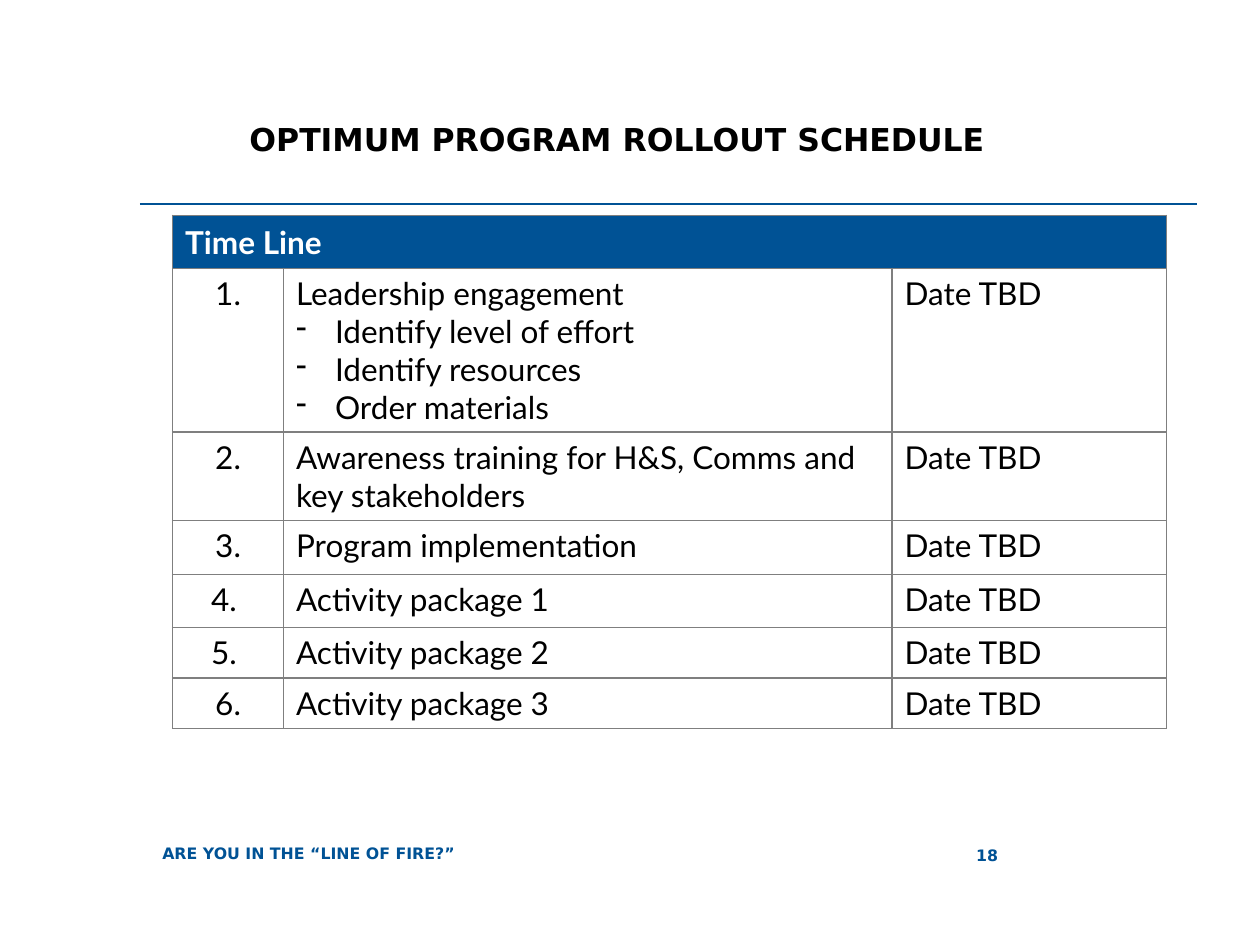
from pptx import Presentation
from pptx.dml.color import RGBColor
from pptx.enum.shapes import MSO_CONNECTOR
from pptx.enum.text import MSO_ANCHOR, PP_ALIGN
from pptx.oxml.ns import qn
from pptx.util import Inches, Pt
from lxml import etree

LINE = MSO_CONNECTOR.STRAIGHT
TOP, MID = MSO_ANCHOR.TOP, MSO_ANCHOR.MIDDLE
LEFT, MID_X, RIGHT = PP_ALIGN.LEFT, PP_ALIGN.CENTER, PP_ALIGN.RIGHT
BLUE = RGBColor(0x00, 0x52, 0x95)
GRAY = RGBColor(0x7F, 0x7F, 0x7F)
BLACK = RGBColor(0, 0, 0)
WHITE = RGBColor(255, 255, 255)

HEAD = {"name": "DejaVu Sans", "size": Pt(18), "bold": True}
FOOT = {"name": "DejaVu Sans", "size": Pt(9), "bold": True}
BODY = {"name": "Lato", "size": Pt(18), "bold": False}
BAND = {"name": "Lato", "size": Pt(18), "bold": True}

TEXTS = [
    ("OPTIMUM PROGRAM ROLLOUT SCHEDULE", (1.98, 0.9, 7.54, 0.8), HEAD, BLACK, LEFT, TOP, 0),
    ("ARE YOU IN THE “LINE OF FIRE?”", (1.19, 6.59, 5.54, 0.37), FOOT, BLUE, LEFT, MID, 0.1),
    ("18", (7.01, 6.59, 1.01, 0.4), FOOT, BLUE, RIGHT, MID, 0.1),
]
TITLE = "Time Line"
DATE = "Date TBD"
STEPS = [
    ("1.", "Leadership engagement",
     ["Identify level of effort", "Identify resources", "Order materials"]),
    ("2.", "Awareness training for H&S, Comms and key stakeholders", []),
    ("3.", "Program implementation", []),
    ("4.\u00a0", "Activity package 1", []),
    ("5.\u00a0", "Activity package 2", []),
    ("6.", "Activity package 3", []),
]
COLS = [0.88, 4.83, 2.18]
ROWS = [0.42, 1.3, 0.7, 0.43, 0.42, 0.4, 0.4]
INDENT = Inches(0.31)


def style(para, look, tint, align=LEFT):
    para.alignment = align
    for key, value in look.items():
        setattr(para.font, key, value)
    para.font.color.rgb = tint


def bullet(para):
    props = para._p.get_or_add_pPr()
    props.set("marL", str(INDENT))
    props.set("indent", str(-INDENT))
    etree.SubElement(props, qn("a:buChar")).set("char", "-")


def border(cell):
    props = cell._tc.get_or_add_tcPr()
    for side in ("lnL", "lnR", "lnT", "lnB"):
        edge = etree.SubElement(props, qn(f"a:{side}"), w=str(Pt(1)))
        fill = etree.SubElement(edge, qn("a:solidFill"))
        etree.SubElement(fill, qn("a:srgbClr"), val=str(GRAY))


def write(cell, text, align=LEFT, subs=()):
    frame = cell.text_frame
    frame.text = text
    style(frame.paragraphs[0], BODY, BLACK, align)
    for sub in subs:
        para = frame.add_paragraph()
        para.text = sub
        bullet(para)
        style(para, BODY, BLACK)


deck = Presentation()
deck.slide_width, deck.slide_height = Inches(10), Inches(7.5)
slide = deck.slides.add_slide(deck.slide_layouts[6])

rule = slide.shapes.add_connector(LINE, *map(Inches, (1.11, 1.62, 9.5, 1.62)))
rule.line.color.rgb = BLUE
rule.line.width = Pt(1)
etree.SubElement(rule._element.spPr, qn("a:effectLst"))

for text, place, look, tint, align, anchor, inset in TEXTS:
    frame = slide.shapes.add_textbox(*map(Inches, place)).text_frame
    frame.word_wrap = True
    frame.vertical_anchor = anchor
    frame.margin_left = Inches(inset)
    frame.text = text
    style(frame.paragraphs[0], look, tint, align)

place = (1.37, 1.71, sum(COLS), sum(ROWS))
table = slide.shapes.add_table(len(ROWS), len(COLS), *map(Inches, place)).table
table.first_row = table.horz_banding = False
for col, width in zip(table.columns, COLS):
    col.width = Inches(width)
for row, height in zip(table.rows, ROWS):
    row.height = Inches(height)
for cell in table.iter_cells():
    border(cell)
    cell.fill.background()

top = table.cell(0, 0)
top.merge(table.cell(0, len(COLS) - 1))
top.fill.solid()
top.fill.fore_color.rgb = BLUE
top.vertical_anchor = MID
top.text = TITLE
style(top.text_frame.paragraphs[0], BAND, WHITE)

for row, (num, step, subs) in enumerate(STEPS, 1):
    write(table.cell(row, 0), num, MID_X)
    write(table.cell(row, 1), step, subs=subs)
    write(table.cell(row, 2), DATE)

deck.save("out.pptx")
